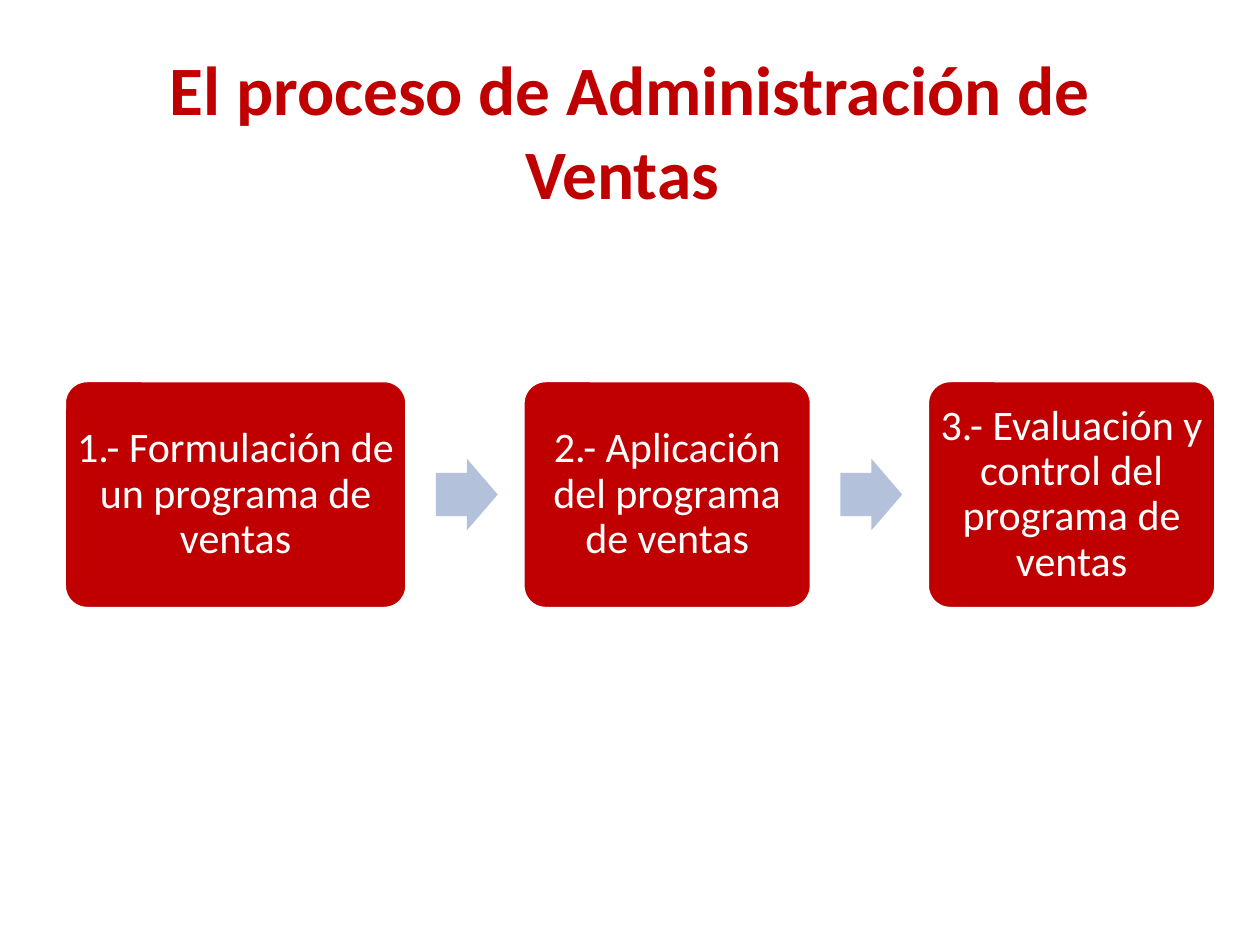
import pptx
import pptx.dml.color
import pptx.enum.shapes
import pptx.enum.text
import pptx.util
from pptx.util import Inches

COLORS = {"red": "C00000", "arrow": "B3C1DB", "white": "FFFFFF"}
SHAPES = pptx.enum.shapes.MSO_SHAPE
ANCHORS = pptx.enum.text.MSO_ANCHOR

STEP_TOP, STEP_HEIGHT = 3.02, 1.81
STEP_GAP = 0.92
ARROW_WIDTH, ARROW_HEIGHT = 0.49, 0.57
ARROW_OFFSET = 0.23
STEPS = [
    ("1.- Formulación de un programa de ventas", 2.72),
    ("2.- Aplicación del programa de ventas", 2.29),
    ("3.- Evaluación y control del programa de ventas", 2.29),
]


def rgb(name):
    return pptx.dml.color.RGBColor.from_string(COLORS[name])


def write_text(shape, text, *, size, color, bold=False, spacing=1.0,
               anchor=ANCHORS.MIDDLE, inset=0.05):
    frame = shape.text_frame
    frame.word_wrap = True
    frame.vertical_anchor = anchor
    frame.margin_left = frame.margin_right = Inches(inset)
    frame.margin_top = frame.margin_bottom = Inches(inset)
    para = frame.paragraphs[0]
    para.alignment = pptx.enum.text.PP_ALIGN.CENTER
    para.line_spacing = spacing
    span = para.add_run()
    span.text = text
    span.font.name = "Calibri"
    span.font.size = pptx.util.Pt(size)
    span.font.bold = bold
    span.font.color.rgb = rgb(color)


def add_filled_shape(page, kind, left, top, width, height, color, adjustments):
    shape = page.shapes.add_shape(
        kind, Inches(left), Inches(top), Inches(width), Inches(height))
    shape.shadow.inherit = False
    shape.fill.solid()
    shape.fill.fore_color.rgb = rgb(color)
    shape.line.fill.background()
    for index, value in enumerate(adjustments):
        shape.adjustments[index] = value
    return shape


def add_title(page, text):
    box = page.shapes.add_textbox(Inches(0.5), Inches(0.3), Inches(9), Inches(1.25))
    write_text(box, text, size=39.6, color="red", bold=True,
               anchor=ANCHORS.TOP, inset=0.07)


def add_step(page, text, left, width):
    box = add_filled_shape(page, SHAPES.ROUNDED_RECTANGLE, left, STEP_TOP,
                           width, STEP_HEIGHT, "red", [0.1])
    box.line.color.rgb = rgb("white")
    box.line.width = pptx.util.Pt(2)
    write_text(box, text, size=24, color="white", spacing=0.9, inset=0.04)


def add_arrow(page, left):
    top = STEP_TOP + (STEP_HEIGHT - ARROW_HEIGHT) / 2
    add_filled_shape(page, SHAPES.RIGHT_ARROW, left, top,
                     ARROW_WIDTH, ARROW_HEIGHT, "arrow", [0.6, 0.5])


def main():
    deck = pptx.Presentation()
    deck.slide_width, deck.slide_height = Inches(10), Inches(7.5)
    page = deck.slides.add_slide(deck.slide_layouts[6])
    add_title(page, "El proceso de Administración de Ventas ")
    left = 0.51
    for number, (text, width) in enumerate(STEPS):
        if number:
            add_arrow(page, left - STEP_GAP + ARROW_OFFSET)
        add_step(page, text, left, width)
        left += width + STEP_GAP
    deck.save("out.pptx")


if __name__ == "__main__":
    main()
